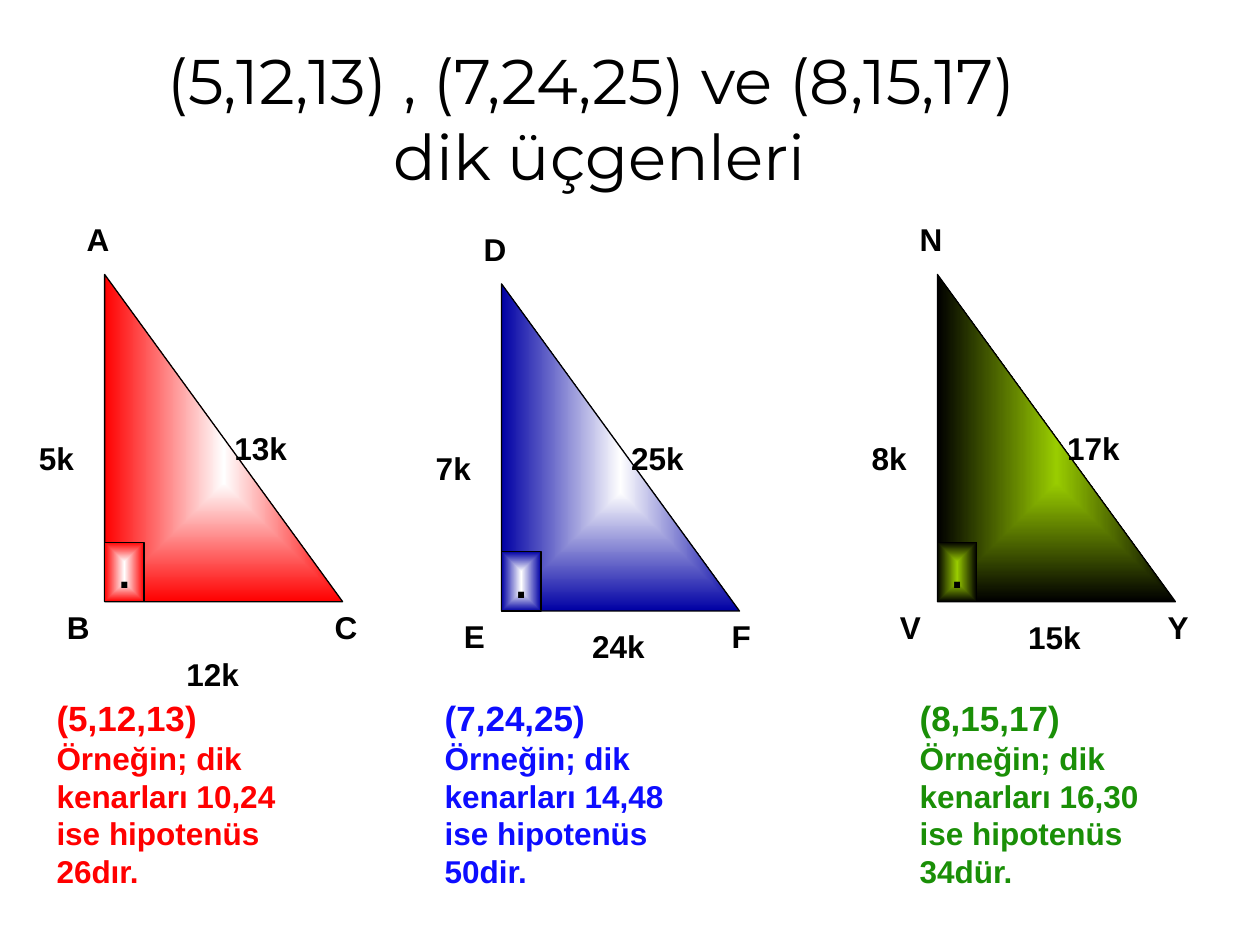
"""Build a slide with three right triangles and their side ratios."""
from dataclasses import dataclass

from lxml import etree
from pptx import Presentation
from pptx import util as u
from pptx.dml.color import RGBColor
from pptx.enum import shapes, text
from pptx.oxml.ns import qn

BLACK = RGBColor(0, 0, 0)
WHITE = RGBColor(255, 255, 255)
RED = RGBColor(255, 0, 0)
NAVY = RGBColor(0, 0, 0xA4)
BLUE = RGBColor(0x0D, 0x0D, 0xFF)
LIME = RGBColor(0x99, 0xCC, 0)
GREEN = RGBColor(0x1A, 0x8F, 0x07)

TRIANGLE_WIDTH, TRIANGLE_HEIGHT = 136, 187
SQUARE_WIDTH, SQUARE_HEIGHT = 22.5, 34
LABEL_HEIGHT = 28.8
VERTEX_WIDTH, SIDE_WIDTH = 45.4, 54
INSET, SPACE = 7.2, 5
TOP, MIDDLE, BOTTOM = (
    text.MSO_ANCHOR.TOP, text.MSO_ANCHOR.MIDDLE, text.MSO_ANCHOR.BOTTOM)
LEFT, CENTER = text.PP_ALIGN.LEFT, text.PP_ALIGN.CENTER


@dataclass(frozen=True)
class Run:
    """Text of one paragraph with its look."""
    words: str
    size: float = 18
    color: RGBColor = BLACK
    font: str = "Arial"
    bold: bool = True


@dataclass(frozen=True)
class Triangle:
    """A right triangle with its names, lengths and example."""
    left: float
    top: float
    inner: RGBColor
    outer: RGBColor
    vertices: str
    lengths: tuple[str, str, str]
    note_left: float
    note_color: RGBColor
    triple: str
    example: str
    base_height: float = LABEL_HEIGHT
    base_inset: float = INSET + SPACE


TRIANGLES = (
    Triangle(59.8, 156.8, WHITE, RED, "ABC", ("5k", "13k", "12k"), 25.2, RED,
             "(5,12,13)", "Örneğin; dik kenarları 10,24 ise hipotenüs 26dır.",
             50.4, INSET),
    Triangle(286.6, 162.2, WHITE, NAVY, "DEF", ("7k", "25k", "24k"), 247, BLUE,
             "(7,24,25)", "Örneğin; dik kenarları 14,48 ise hipotenüs 50dir."),
    Triangle(535.7, 156.8, LIME, BLACK, "NVY", ("8k", "17k", "15k"), 518.4, GREEN,
             "(8,15,17)", "Örneğin; dik kenarları 16,30 ise hipotenüs 34dür."),
)


def write(frame, runs: tuple[Run, ...], alignment=LEFT, anchor=TOP,
          wrap: bool = True, inset: float = INSET) -> None:
    """Fill a text frame with one paragraph for each run."""
    frame.word_wrap = wrap
    frame.vertical_anchor = anchor
    frame.margin_left = u.Pt(inset)
    for index, item in enumerate(runs):
        paragraph = frame.add_paragraph() if index else frame.paragraphs[0]
        paragraph.alignment = alignment
        run = paragraph.add_run()
        run.text = item.words
        run.font.size = u.Pt(item.size)
        run.font.name = item.font
        run.font.bold = item.bold
        run.font.color.rgb = item.color


def add_text(slide, left: float, top: float, width: float, height: float,
             *runs: Run, **layout) -> None:
    """Add a text box with the given runs."""
    box = slide.shapes.add_textbox(*map(u.Pt, (left, top, width, height)))
    write(box.text_frame, runs, **layout)


def add_glowing_shape(slide, kind, left: float, top: float, width: float,
                      height: float, inner: RGBColor, outer: RGBColor):
    """Add an outlined shape whose colour runs from its centre to its edge."""
    shape = slide.shapes.add_shape(kind, *map(u.Pt, (left, top, width, height)))
    shape.shadow.inherit = False
    shape.line.color.rgb = BLACK
    shape.line.width = u.Pt(0.75)
    shape.fill.gradient()
    for stop, color in zip(shape.fill.gradient_stops, (inner, outer)):
        stop.color.rgb = color
    gradient = shape._element.spPr.find(qn("a:gradFill"))
    gradient.remove(gradient.find(qn("a:lin")))
    shading = etree.SubElement(gradient, qn("a:path"), {"path": "shape"})
    etree.SubElement(shading, qn("a:fillToRect"), dict.fromkeys("ltrb", "50000"))
    return shape


def draw_triangle(slide, triangle: Triangle) -> None:
    """Draw a triangle, its right angle, its labels and its example."""
    left, top = triangle.left, triangle.top
    colors = triangle.inner, triangle.outer
    add_glowing_shape(slide, shapes.MSO_SHAPE.RIGHT_TRIANGLE, left, top,
                      TRIANGLE_WIDTH, TRIANGLE_HEIGHT, *colors)
    square = add_glowing_shape(
        slide, shapes.MSO_SHAPE.RECTANGLE, left,
        top + TRIANGLE_HEIGHT - SQUARE_HEIGHT, SQUARE_WIDTH, SQUARE_HEIGHT, *colors)
    write(square.text_frame, (Run(".", 24),), CENTER, MIDDLE, False)

    corners = (-17.3, -34.4), (-28.6, TRIANGLE_HEIGHT), (124.4, TRIANGLE_HEIGHT)
    for name, (across, down) in zip(triangle.vertices, corners):
        add_text(slide, left + across, top + down, VERTEX_WIDTH, LABEL_HEIGHT,
                 Run(name))

    height, hypotenuse, base = map(Run, triangle.lengths)
    add_text(slide, left - 59.8, top + 90.8, SIDE_WIDTH, LABEL_HEIGHT, height,
             inset=INSET + 3 * SPACE)
    add_text(slide, left + 61.9, top + 85, SIDE_WIDTH, LABEL_HEIGHT, hypotenuse,
             inset=INSET + SPACE)
    add_text(slide, left + 39.6, top + 192.5, SIDE_WIDTH, triangle.base_height,
             base, anchor=BOTTOM, inset=triangle.base_inset)
    add_text(slide, triangle.note_left, 394.6, 142, 118,
             Run(triangle.triple, 20, triangle.note_color),
             Run(triangle.example, 18, triangle.note_color))


def main() -> None:
    """Build and save the presentation."""
    presentation = Presentation()
    presentation.slide_width, presentation.slide_height = u.Pt(720), u.Pt(540)
    slide = presentation.slides.add_slide(presentation.slide_layouts[6])
    title = ("(5,12,13) , (7,24,25) ve (8,15,17) ", "dik üçgenleri")
    add_text(slide, 25.2, 20.2, 635, 102.2,
             *(Run(line, 36, font="Montserrat", bold=False) for line in title),
             alignment=CENTER, wrap=False)
    for triangle in TRIANGLES:
        draw_triangle(slide, triangle)
    presentation.save("out.pptx")


if __name__ == "__main__":
    main()
